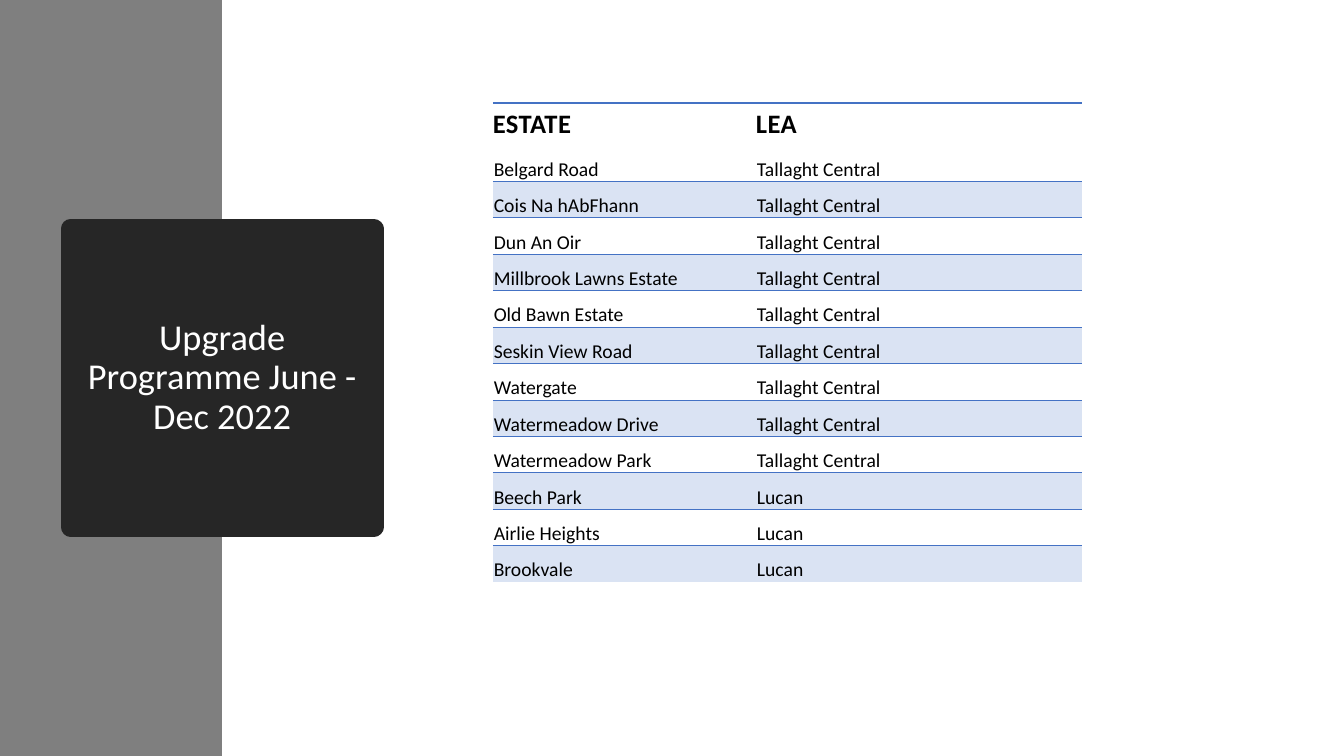
from dataclasses import dataclass

from lxml.etree import SubElement
from pptx import Presentation
from pptx.dml.color import RGBColor
from pptx.enum.shapes import MSO_SHAPE
from pptx.enum.text import MSO_ANCHOR, PP_ALIGN
from pptx.oxml import parse_xml
from pptx.oxml.ns import nsdecls, qn
from pptx.util import Pt


@dataclass(frozen=True)
class Theme:
    font: str = "Calibri"
    band: str = "7F7F7F"
    card: str = "262626"
    white: str = "FFFFFF"
    text: str = "000000"
    stripe: str = "DAE3F3"
    rule: str = "4472C4"
    title_size: float = 26
    header_size: float = 19
    body_size: float = 14


THEME = Theme()
NO_STYLE = "{2D5ABB26-0587-4C30-8999-92F81FD0307C}"
HEADER = ("ESTATE", "LEA")
ESTATES = {
    "Tallaght Central": (
        "Belgard Road", "Cois Na hAbFhann", "Dun An Oir",
        "Millbrook Lawns Estate", "Old Bawn Estate", "Seskin View Road",
        "Watergate", "Watermeadow Drive", "Watermeadow Park",
    ),
    "Lucan": ("Beech Park", "Airlie Heights", "Brookvale"),
}


def add_run(p, text, size, color, bold=False):
    r = p.add_run()
    r.text = text
    r.font.name = THEME.font
    r.font.size = Pt(size)
    r.font.bold = bold
    r.font.color.rgb = RGBColor.from_string(color)
    return r


def add_block(s, left, top, width, height, color):
    sp = s.shapes.add_shape(MSO_SHAPE.RECTANGLE, Pt(left), Pt(top), Pt(width), Pt(height))
    sp.shadow.inherit = False
    sp.fill.solid()
    sp.fill.fore_color.rgb = RGBColor.from_string(color)
    sp.line.fill.background()
    return sp


def add_title_card(s, text):
    sp = add_block(s, 50.4, 163.5, 216.7, 213, THEME.card)
    sp.line.color.rgb = RGBColor.from_string(THEME.card)
    sp.line.width = Pt(13.75)
    SubElement(sp.line._get_or_add_ln(), qn("a:round"))
    tf = sp.text_frame
    tf.word_wrap = True
    tf.vertical_anchor = MSO_ANCHOR.MIDDLE
    p = tf.paragraphs[0]
    p.alignment = PP_ALIGN.CENTER
    p.line_spacing = 0.9
    add_run(p, text, THEME.title_size, THEME.white)


def set_top_rule(cell, width):
    ln = parse_xml(
        f'<a:lnT {nsdecls("a")} w="{Pt(width)}"><a:solidFill>'
        f'<a:srgbClr val="{THEME.rule}"/></a:solidFill></a:lnT>'
    )
    cell._tc.get_or_add_tcPr().insert(0, ln)


def fill_cell(cell, text, is_header, is_striped):
    cell.margin_left = Pt(0 if is_header else 0.7)
    cell.margin_top = Pt(1.4 if is_header else 0.7)
    cell.margin_right = Pt(0.7)
    cell.margin_bottom = Pt(0)
    cell.vertical_anchor = MSO_ANCHOR.MIDDLE if is_header else MSO_ANCHOR.BOTTOM
    size = THEME.header_size if is_header else THEME.body_size
    r = add_run(cell.text_frame.paragraphs[0], text, size, THEME.text, is_header)
    if is_header:
        r.font._element.set("spc", "30")
    if is_striped:
        cell.fill.solid()
        cell.fill.fore_color.rgb = RGBColor.from_string(THEME.stripe)
    else:
        cell.fill.background()
    if is_header or is_striped:
        set_top_rule(cell, 1.5 if is_header else 0.75)


def add_estate_table(s, left, top, col_widths, header_height, row_height):
    rows = [HEADER] + [(estate, lea) for lea, names in ESTATES.items() for estate in names]
    height = header_height + row_height * (len(rows) - 1)
    frame = s.shapes.add_table(
        len(rows), len(col_widths), Pt(left), Pt(top), Pt(sum(col_widths)), Pt(height)
    )
    table = frame.table
    table.horz_banding = False
    table._tbl.tblPr.find(qn("a:tableStyleId")).text = NO_STYLE
    for col, width in zip(table.columns, col_widths):
        col.width = Pt(width)
    for i, values in enumerate(rows):
        table.rows[i].height = Pt(row_height if i else header_height)
        for j, text in enumerate(values):
            fill_cell(table.cell(i, j), text, i == 0, i > 0 and i % 2 == 0)


def main():
    prs = Presentation()
    prs.slide_width, prs.slide_height = Pt(960), Pt(540)
    s = prs.slides.add_slide(prs.slide_layouts[6])
    add_block(s, 0, 0, 158.5, 540, THEME.band)
    add_title_card(s, "Upgrade Programme June - Dec 2022")
    add_estate_table(s, 352, 73.4, (188, 233), 30.2, 26.05)
    prs.save("out.pptx")


if __name__ == "__main__":
    main()
